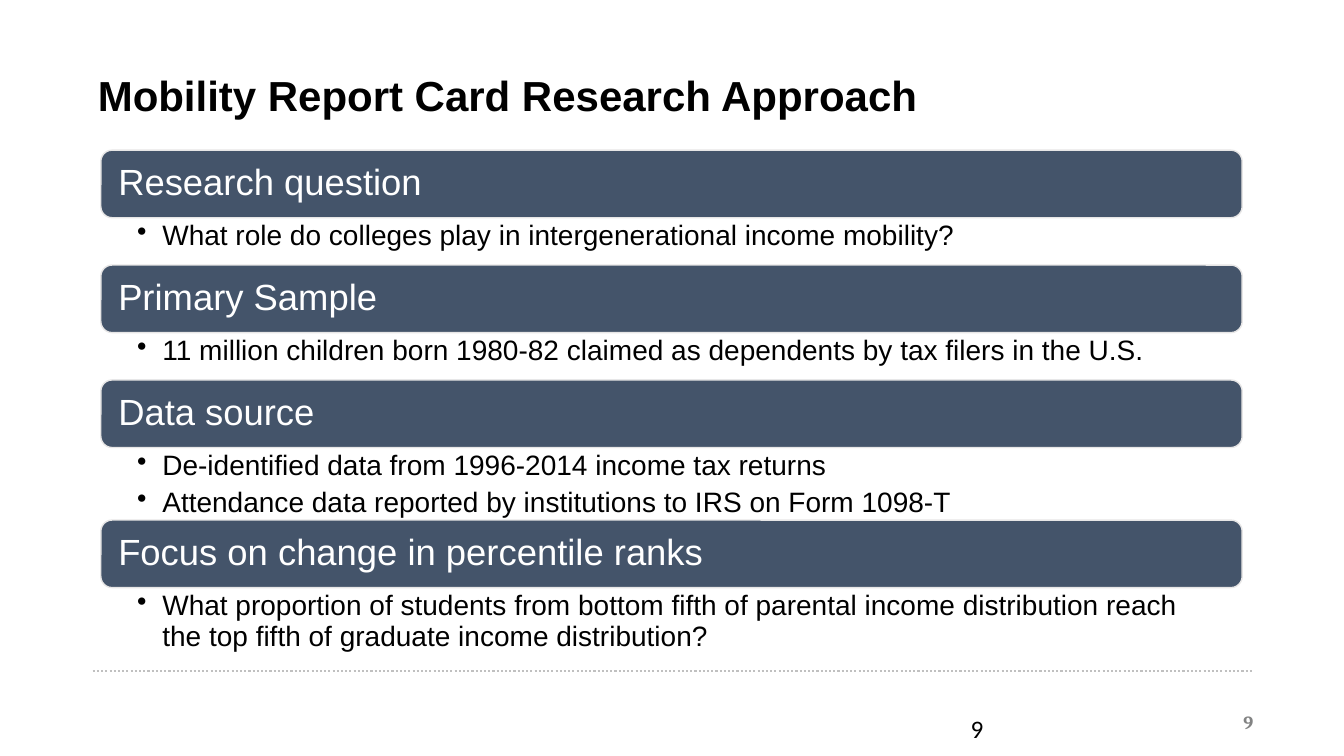
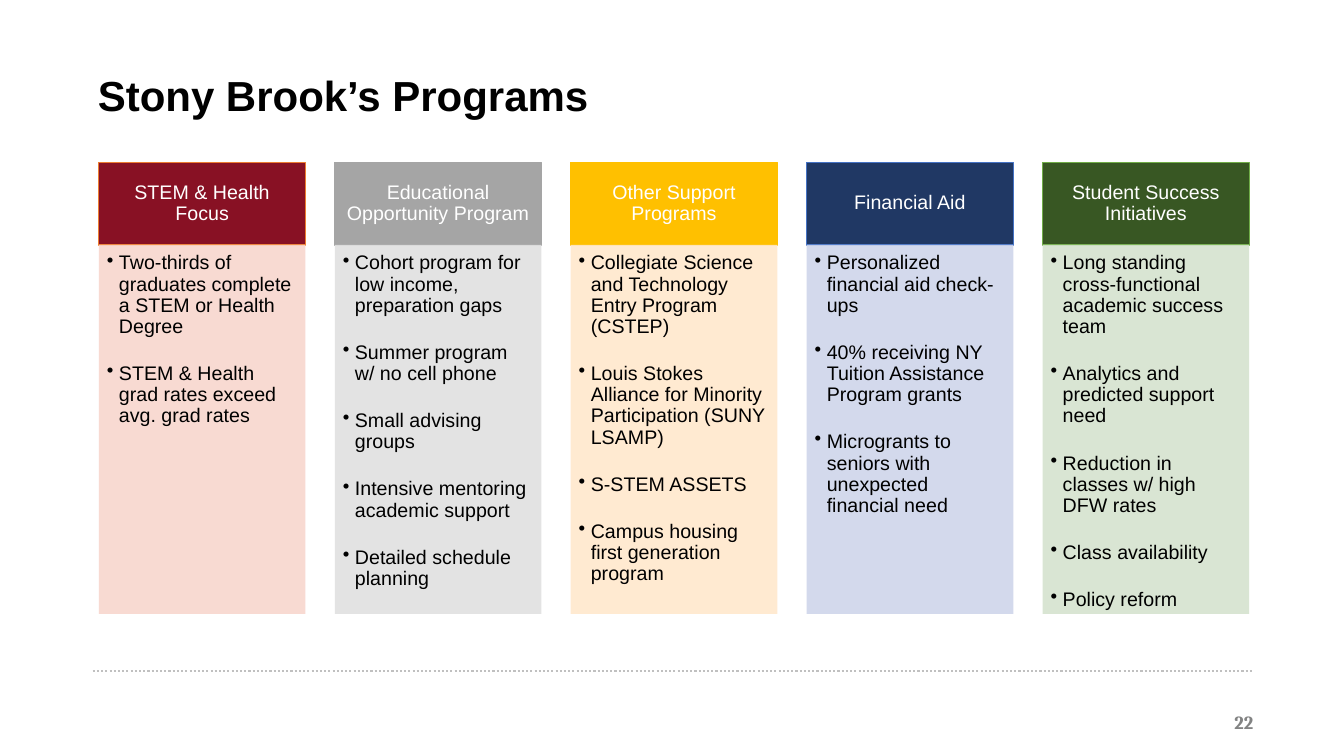
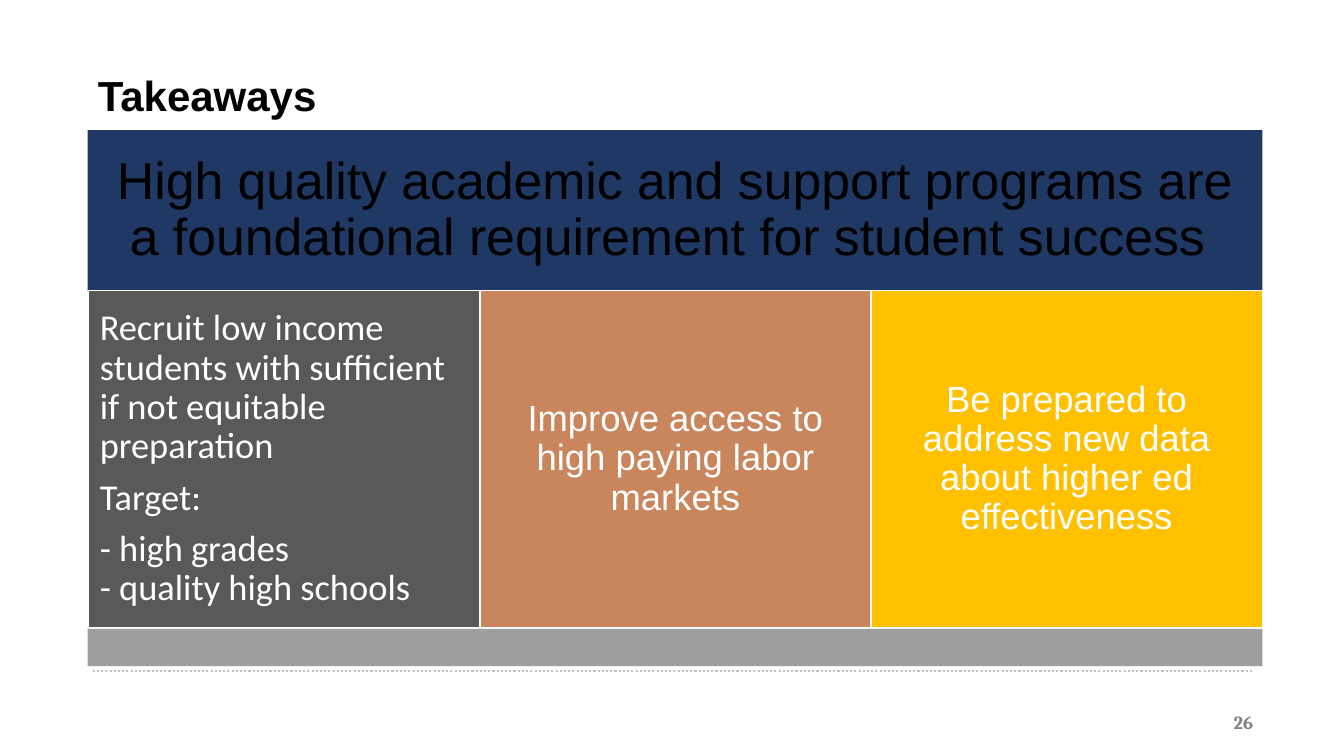
"""Builds three slides on college mobility research, support programs and takeaways."""
from lxml import etree
from pptx import Presentation
from pptx.dml.color import RGBColor
from pptx.enum import dml, shapes, text
from pptx.oxml import ns
from pptx.util import Inches, Pt

COLORS = {
    "black": "000000", "white": "FFFFFF", "rule": "C0C0C0", "number": "828383",
    "slate": "44546A", "slate_edge": "E7E6E6", "navy": "203864", "navy_edge": "4472C4",
    "navy_tint": "CFD5EA", "maroon": "881124", "maroon_edge": "ED7D31",
    "maroon_tint": "F8D7CE", "gray": "A5A5A5", "gray_tint": "E1E1E1",
    "gold": "FFC000", "gold_tint": "FFE8CC", "green": "385723",
    "green_edge": "70AD47", "green_tint": "D5E3CF", "charcoal": "595959",
    "copper": "C9855C", "base": "9E9E9E",
}
LEFT, CENTER, RIGHT = text.PP_ALIGN.LEFT, text.PP_ALIGN.CENTER, text.PP_ALIGN.RIGHT
TOP, MIDDLE = text.MSO_ANCHOR.TOP, text.MSO_ANCHOR.MIDDLE
RECT, ROUNDED = shapes.MSO_SHAPE.RECTANGLE, shapes.MSO_SHAPE.ROUNDED_RECTANGLE

SECTIONS = [
    ("Research question", 0.47,
     ["What role do colleges play in intergenerational income mobility?"]),
    ("Primary Sample", 0.47,
     ["11 million children born 1980-82 claimed as dependents by tax filers in the U.S."]),
    ("Data source", 0.72,
     ["De-identified data from 1996-2014 income tax returns",
      "Attendance data reported by institutions to IRS on Form 1098-T"]),
    ("Focus on change in percentile ranks", 0.65,
     ["What proportion of students from bottom fifth of parental income distribution reach "
      "the top fifth of graduate income distribution?"]),
]
PROGRAMS = [
    ("STEM & Health Focus", "maroon", "maroon_edge", "maroon_tint",
     ["Two-thirds of graduates complete a STEM or Health Degree",
      "STEM & Health grad rates exceed avg. grad rates"]),
    ("Educational Opportunity Program", "gray", "gray", "gray_tint",
     ["Cohort program for low income, preparation gaps", "Summer program w/ no cell phone",
      "Small advising groups", "Intensive mentoring academic support",
      "Detailed schedule planning"]),
    ("Other Support Programs", "gold", "gold", "gold_tint",
     ["Collegiate Science and Technology Entry Program (CSTEP)",
      "Louis Stokes Alliance for Minority Participation (SUNY LSAMP)",
      "S-STEM ASSETS", "Campus housing first generation program"]),
    ("Financial Aid", "navy", "navy_edge", "navy_tint",
     ["Personalized financial aid check-ups",
      "40% receiving NY Tuition Assistance Program grants",
      "Microgrants to seniors with unexpected financial need"]),
    ("Student Success Initiatives", "green", "green_edge", "green_tint",
     ["Long standing cross-functional academic success team",
      "Analytics and predicted support need", "Reduction in classes w/ high DFW rates",
      "Class availability", "Policy reform"]),
]
TAKEAWAYS = [
    ("charcoal", LEFT, "Calibri",
     ["Recruit low income students with sufficient if not equitable preparation",
      "Target:", "- high grades\v- quality high schools"]),
    ("copper", CENTER, "Arial", ["Improve access to high paying labor markets"]),
    ("gold", CENTER, "Arial",
     ["Be prepared to address new data about higher ed effectiveness"]),
]


def rgb(name):
    """Return the named colour."""
    return RGBColor.from_string(COLORS[name])


def assign(target, values):
    """Set each value as an attribute of the target."""
    for name, value in values.items():
        setattr(target, name, value)


def add_bullet(para, indent):
    """Give a paragraph a hanging round bullet."""
    properties = para._p.get_or_add_pPr()
    properties.set("marL", str(Inches(indent)))
    properties.set("indent", str(-Inches(indent)))
    etree.SubElement(properties, ns.qn("a:buChar")).set("char", "•")


def write(box, lines, size, color="black", font="Arial", bold=False, align=LEFT,
          anchor=MIDDLE, insets=(0.1, 0.05, 0.1, 0.05), spacing=0.9, gap=0, indent=0):
    """Fill a box with formatted paragraphs."""
    frame = box.text_frame
    left, top, right, bottom = map(Inches, insets)
    assign(frame, {"word_wrap": True, "auto_size": text.MSO_AUTO_SIZE.NONE,
                   "vertical_anchor": anchor, "margin_left": left, "margin_top": top,
                   "margin_right": right, "margin_bottom": bottom})
    for index, line in enumerate(lines):
        para = frame.add_paragraph() if index else frame.paragraphs[0]
        para.text = line
        if indent:
            add_bullet(para, indent)
        assign(para, {"alignment": align, "line_spacing": spacing,
                      "space_before": Pt(gap if index else 0), "space_after": Pt(0)})
        for span in para.runs:
            assign(span.font, {"name": font, "size": Pt(size), "bold": bold})
            span.font.color.rgb = rgb(color)


def add_text(page, area, lines, size, **style):
    """Add a text box."""
    write(page.shapes.add_textbox(*map(Inches, area)), lines, size, **style)


def add_panel(page, area, fill, edge=None, kind=RECT, opacity=None):
    """Add a filled shape with an optional edge and opacity in percent."""
    panel = page.shapes.add_shape(kind, *map(Inches, area))
    panel.shadow.inherit = False
    panel.fill.solid()
    panel.fill.fore_color.rgb = rgb(fill)
    if opacity:
        color = panel._element.spPr.find(".//" + ns.qn("a:srgbClr"))
        etree.SubElement(color, ns.qn("a:alpha")).set("val", str(opacity * 1000))
    if edge:
        panel.line.color.rgb = rgb(edge)
        panel.line.width = Pt(1)
    else:
        panel.line.fill.background()
    return panel


def add_page(deck, title, number):
    """Add a slide with its title, dotted rule and number."""
    page = deck.slides.add_slide(deck.slide_layouts[5])
    rule = page.shapes.add_connector(shapes.MSO_CONNECTOR.STRAIGHT, Inches(0.92),
                                     Inches(6.66), Inches(12.42), Inches(6.66))
    rule.line.color.rgb = rgb("rule")
    assign(rule.line, {"width": Pt(1.5), "dash_style": dml.MSO_LINE.ROUND_DOT})
    etree.SubElement(rule._element.spPr, ns.qn("a:effectLst"))
    add_text(page, (9.56, 6.96, 3, 0.4), [str(number)], 13.3, color="number",
             font="Cambria", bold=True, align=RIGHT, spacing=1.0,
             insets=(0.13, 0.07, 0.13, 0.07))
    heading = page.shapes.title
    assign(heading, {"left": Inches(0.87), "top": Inches(0.74),
                     "width": Inches(11.65), "height": Inches(0.9)})
    write(heading, [title], 30, bold=True, anchor=TOP, spacing=0.8)
    return page


def add_approach(deck):
    """Add the slide of stacked headings with lists."""
    page = add_page(deck, "Mobility Report Card Research Approach", 9)
    add_text(page, (9.53, 7.03, 3, 0.4), ["9"], 18, font="Calibri", anchor=TOP, spacing=1.0)
    top, bar_height = 1.49, 0.67
    for heading, list_height, items in SECTIONS:
        bar = add_panel(page, (1, top, 11.32, bar_height), "slate", "slate_edge", ROUNDED)
        write(bar, [heading], 26, color="white", insets=(0.14, 0.11, 0.14, 0.11))
        top += bar_height
        add_text(page, (1, top, 11.32, list_height), items, 20, anchor=TOP,
                 insets=(0.36, 0.04, 0.2, 0.04), gap=4.6, indent=0.25)
        top += list_height


def add_programs(deck):
    """Add the slide of program columns."""
    page = add_page(deck, "Stony Brook’s Programs", 22)
    for index, (heading, fill, edge, tint, items) in enumerate(PROGRAMS):
        left = 0.98 + 2.34 * index
        header = add_panel(page, (left, 1.61, 2.05, 0.82), fill, edge)
        write(header, [heading], 14, color="white", align=CENTER,
              insets=(0.11, 0.06, 0.11, 0.06))
        body = add_panel(page, (left, 2.43, 2.05, 3.66), tint, opacity=90)
        write(body, items, 14, anchor=TOP, insets=(0.08, 0.08, 0.11, 0.12),
              gap=18.5, indent=0.12)


def add_takeaways(deck):
    """Add the slide of a banner over three panels."""
    page = add_page(deck, "Takeaways", 26)
    banner = add_panel(page, (0.87, 1.29, 11.65, 1.6), "navy")
    write(banner, ["High quality academic and support programs are a foundational "
                   "requirement for student success "], 37, align=CENTER, insets=(0.15,) * 4)
    for index, (fill, align, font, lines) in enumerate(TAKEAWAYS):
        panel = add_panel(page, (0.88 + 3.88 * index, 2.88, 3.88, 3.35), fill, "white")
        write(panel, lines, 26, color="white", font=font, align=align,
              insets=(0.11,) * 4, gap=8.7)
    add_panel(page, (0.87, 6.24, 11.65, 0.37), "base")


def main():
    """Build and save the deck."""
    deck = Presentation()
    assign(deck, {"slide_width": Inches(13.33), "slide_height": Inches(7.5)})
    add_approach(deck)
    add_programs(deck)
    add_takeaways(deck)
    deck.save("out.pptx")


if __name__ == "__main__":
    main()
